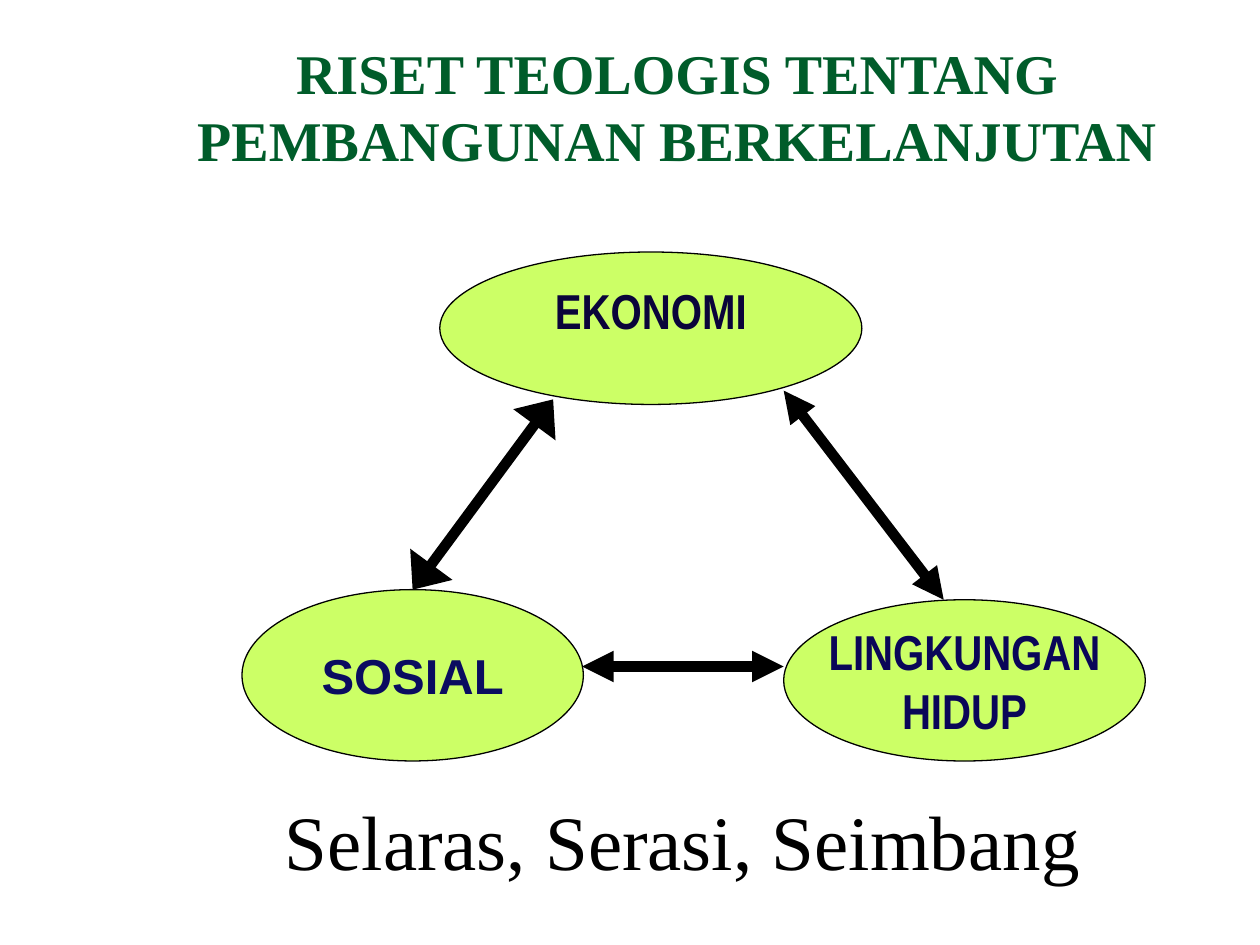
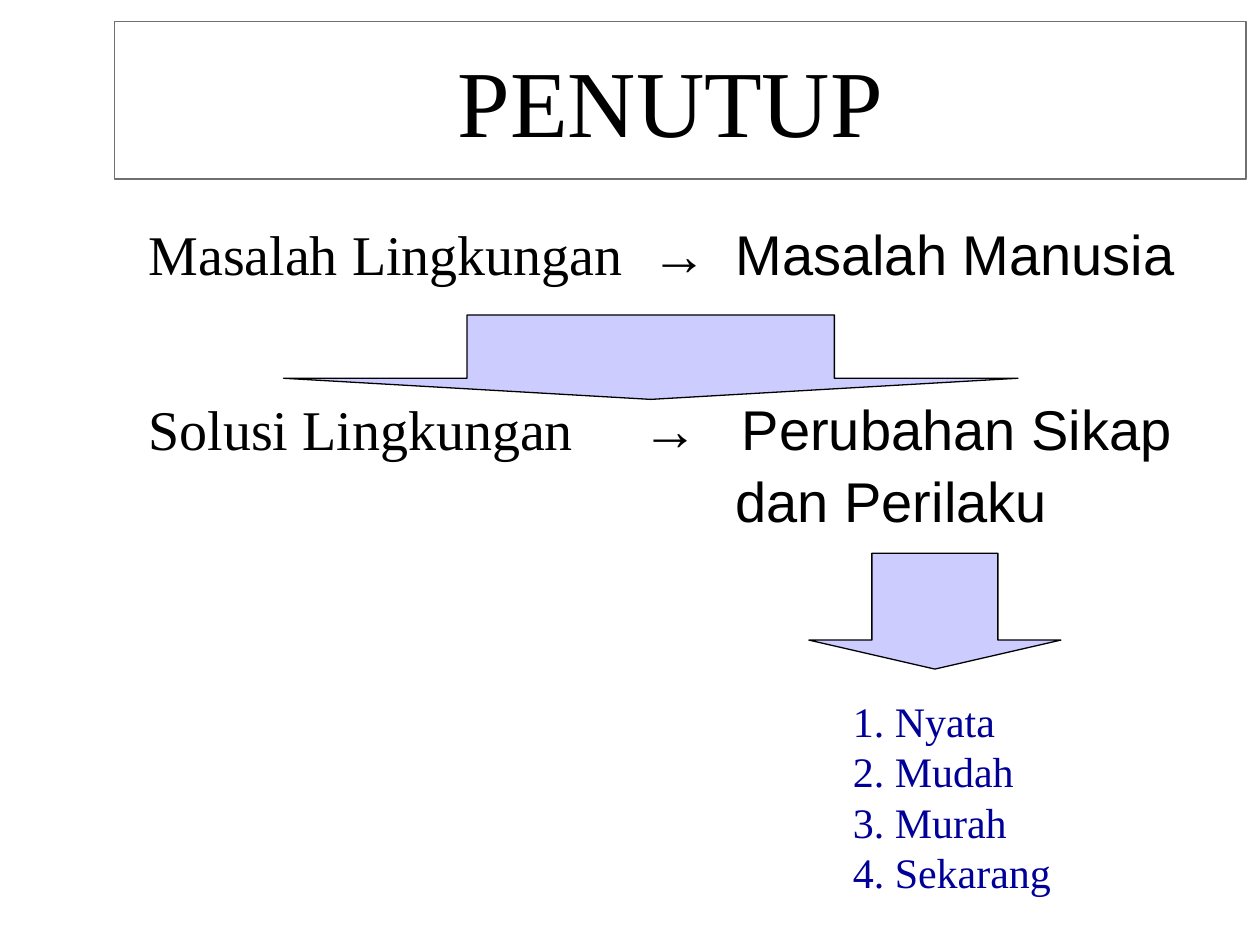
from dataclasses import dataclass

from pptx import Presentation
from pptx.dml.color import RGBColor
from pptx.enum.shapes import MSO_CONNECTOR as Connector, MSO_SHAPE as Shape
from pptx.enum.text import MSO_ANCHOR as Anchor, MSO_AUTO_SIZE as AutoSize, PP_ALIGN as Align
from pptx.oxml.ns import qn
from pptx.util import Emu, Pt
from lxml.etree import SubElement

# Shared style: 100 px to the inch
EMU_PER_PX = 9144
SERIF, SANS, NARROW = "Times New Roman", "Arial", "Arial Narrow"
BLACK, GREEN, LIME, LILAC, NAVY, GRAY = "000000", "005C2A", "CCFF66", "CCCCFF", "000099", "6F6F74"


@dataclass(frozen=True)
class Box:
    left: int
    top: int
    width: int
    height: int


@dataclass(frozen=True)
class Style:
    font: str
    size: int
    color: str = BLACK
    bold: bool = False


@dataclass(frozen=True)
class Pillar:
    box: Box
    text: str
    style: Style
    anchor: Anchor = Anchor.MIDDLE


@dataclass(frozen=True)
class Link:
    start: tuple[int, int]
    end: tuple[int, int]
    head_width: str = "med"


@dataclass(frozen=True)
class TabbedLine:
    """A line whose phrases start at the tab stops, the first at the left edge."""
    phrases: tuple[str, ...]
    tabs: tuple[int, ...]


def px(length: int) -> Emu:
    return Emu(length * EMU_PER_PX)


def rgb(value: str) -> RGBColor:
    return RGBColor.from_string(value)


def place(box: Box) -> tuple[Emu, ...]:
    return px(box.left), px(box.top), px(box.width), px(box.height)


def format_run(run, style: Style) -> None:
    run.font.name = style.font
    run.font.size = Pt(style.size)
    run.font.bold = style.bold
    run.font.color.rgb = rgb(style.color)


def write(text_frame, text: str, style: Style, align: Align = Align.CENTER) -> None:
    text_frame.text = text
    for paragraph in text_frame.paragraphs:
        paragraph.alignment = align
        for run in paragraph.runs:
            format_run(run, style)


def add_titled_slide(presentation, box: Box, text: str, style: Style):
    slide = presentation.slides.add_slide(presentation.slide_layouts[5])
    title = slide.shapes.title
    title.left, title.top, title.width, title.height = place(box)
    text_frame = title.text_frame
    text_frame.auto_size = AutoSize.NONE
    text_frame.vertical_anchor = Anchor.MIDDLE
    write(text_frame, text, style)
    return slide


def add_filled(slide, kind: Shape, box: Box, fill: str, line_width: float):
    shape = slide.shapes.add_shape(kind, *place(box))
    shape.shadow.inherit = False
    shape.fill.solid()
    shape.fill.fore_color.rgb = rgb(fill)
    shape.line.color.rgb = rgb(BLACK)
    shape.line.width = Pt(line_width)
    return shape


def add_pillar(slide, pillar: Pillar):
    ellipse = add_filled(slide, Shape.OVAL, pillar.box, LIME, 0.75)
    ellipse.text_frame.word_wrap = False
    ellipse.text_frame.vertical_anchor = pillar.anchor
    write(ellipse.text_frame, pillar.text, pillar.style)
    return ellipse


def add_link(slide, link: Link):
    connector = slide.shapes.add_connector(
        Connector.STRAIGHT, *(px(value) for value in link.start + link.end))
    connector.line.color.rgb = rgb(BLACK)
    connector.line.width = Pt(6)
    line = connector._element.spPr.find(qn("a:ln"))
    for end in ("a:headEnd", "a:tailEnd"):
        SubElement(line, qn(end), type="triangle", w=link.head_width, len="med")
    SubElement(connector._element.spPr, qn("a:effectLst"))
    return connector


def add_text_frame(slide, box: Box):
    text_frame = slide.shapes.add_textbox(*place(box)).text_frame
    text_frame.word_wrap = True
    return text_frame


def add_tabbed_lines(slide, box: Box, lines: list[TabbedLine]) -> None:
    text_frame = add_text_frame(slide, box)
    for index, line in enumerate(lines):
        paragraph = text_frame.add_paragraph() if index else text_frame.paragraphs[0]
        tab_list = SubElement(paragraph._p.get_or_add_pPr(), qn("a:tabLst"))
        for tab in line.tabs:
            SubElement(tab_list, qn("a:tab"), pos=str(px(tab)), algn="l")
        paragraph.line_spacing = 0.9
        if index:
            paragraph.space_before = Pt(6.4)
        for position, phrase in enumerate(line.phrases):
            run = paragraph.add_run()
            run.text = f"\t{phrase}" if position else phrase
            format_run(run, Style(SANS if position else SERIF, 32))


def build_pillars_slide(presentation) -> None:
    slide = add_titled_slide(
        presentation, Box(100, 42, 875, 83),
        "RISET TEOLOGIS TENTANG PEMBANGUNAN BERKELANJUTAN",
        Style(SERIF, 32, GREEN, True))

    # Three pillars
    environment = Pillar(Box(622, 476, 287, 128), "LINGKUNGAN\nHIDUP",
                         Style(NARROW, 28, "0A0658", True))
    social = Pillar(Box(192, 468, 271, 136), "SOSIAL", Style(SANS, 28, "0A0C60", True))
    economy = Pillar(Box(349, 200, 335, 121), "EKONOMI",
                     Style(NARROW, 28, "0A043A", True), Anchor.TOP)
    _, social_ellipse, _ = [add_pillar(slide, pillar)
                            for pillar in (environment, social, economy)]

    # Two-way links between them
    economy_social = add_link(slide, Link((439, 317), (327, 468), "lg"))
    economy_social.end_connect(social_ellipse, 0)
    add_link(slide, Link((622, 310), (749, 476)))
    add_link(slide, Link((462, 529), (622, 529)))

    # Motto
    write(add_text_frame(slide, Box(117, 625, 850, 67)),
          "Selaras, Serasi, Seimbang", Style(SERIF, 44))


def build_closing_slide(presentation) -> None:
    slide = add_titled_slide(presentation, Box(91, 17, 898, 125), "PENUTUP ", Style(SERIF, 54))
    border = slide.shapes.title.line
    border.color.rgb = rgb(GRAY)
    border.width = Pt(0.75)

    # Problem and solution
    add_tabbed_lines(slide, Box(108, 175, 883, 58), [
        TabbedLine(("Masalah Lingkungan", "→", "Masalah Manusia"), (399, 466))])
    add_tabbed_lines(slide, Box(108, 314, 870, 108), [
        TabbedLine(("Solusi Lingkungan", "→", "Perubahan Sikap"), (392, 471)),
        TabbedLine(("", "dan Perilaku"), (466,))])

    # Traits of the change
    write(add_text_frame(slide, Box(667, 547, 200, 170)),
          "1. Nyata\n2. Mudah\n3. Murah\n4. Sekarang", Style(SERIF, 24, NAVY), Align.LEFT)

    # Arrows from step to step
    for box in (Box(642, 439, 200, 92), Box(225, 250, 583, 67)):
        arrow = add_filled(slide, Shape.DOWN_ARROW, box, LILAC, 0)
        arrow.adjustments[0], arrow.adjustments[1] = 0.5, 0.25


def main() -> None:
    presentation = Presentation()
    presentation.slide_width, presentation.slide_height = px(1000), px(750)
    build_pillars_slide(presentation)
    build_closing_slide(presentation)
    presentation.save("out.pptx")


if __name__ == "__main__":
    main()
